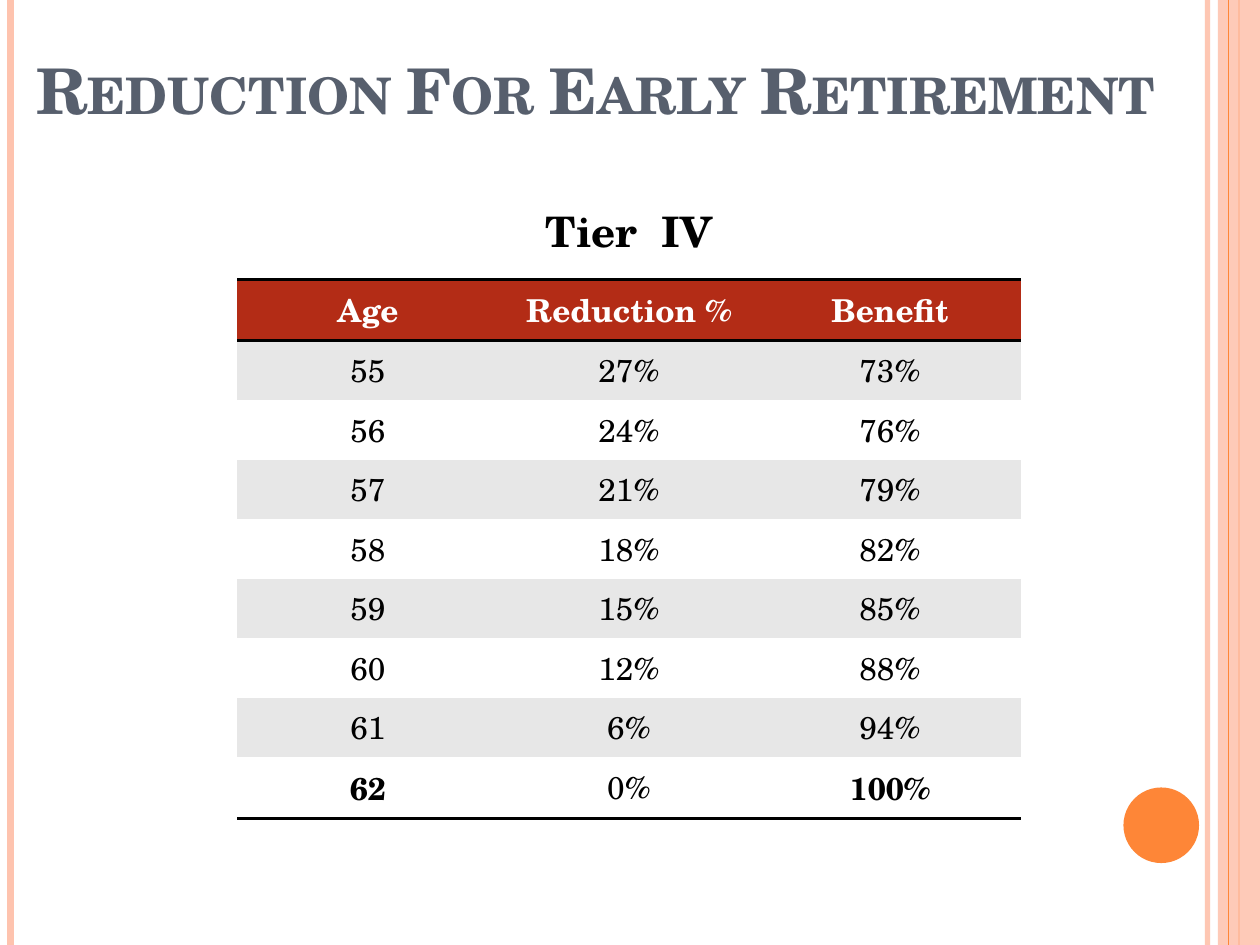
from lxml import etree
from pptx import Presentation
from pptx.dml.color import RGBColor
from pptx.enum.shapes import MSO_CONNECTOR, MSO_SHAPE
from pptx.enum.text import MSO_ANCHOR, MSO_AUTO_SIZE, PP_ALIGN
from pptx.oxml.ns import qn
from pptx.util import Pt

STRAIGHT = MSO_CONNECTOR.STRAIGHT
RECTANGLE, OVAL = MSO_SHAPE.RECTANGLE, MSO_SHAPE.OVAL
BOTTOM = MSO_ANCHOR.BOTTOM
NO_FIT, GROW = MSO_AUTO_SIZE.NONE, MSO_AUTO_SIZE.SHAPE_TO_FIT_TEXT
LEFT, CENTER = PP_ALIGN.LEFT, PP_ALIGN.CENTER

PEACH = RGBColor(0xFE, 0xC3, 0xAE)
ORANGE = RGBColor(0xFE, 0x86, 0x37)
SLATE = RGBColor(0x57, 0x5F, 0x6D)
BRICK = RGBColor(0xB3, 0x2C, 0x16)
GRAY = RGBColor(0xE7, 0xE7, 0xE7)
WHITE = RGBColor(0xFF, 0xFF, 0xFF)
BLACK = RGBColor(0, 0, 0)

FONT = "TeX Gyre Schola"
PAGE_WIDTH, PAGE_HEIGHT = 720, 540
HEADINGS = ("Age", "Reduction %", "Benefit")
REDUCTIONS = {55: 27, 56: 24, 57: 21, 58: 18, 59: 15, 60: 12, 61: 6, 62: 0}
FULL_AGE = 62


def write_text(frame, text, size=18, color=BLACK, bold=False, align=CENTER, small_caps=False):
    """Put one formatted line of text into a text frame."""
    para = frame.paragraphs[0]
    para.alignment = align
    span = para.add_run()
    span.text = text
    span.font.name = FONT
    span.font.size = Pt(size)
    span.font.bold = bold
    span.font.color.rgb = color
    if small_caps:
        span.font._element.set("cap", "small")


def set_opacity(parent, percent):
    """Make the solid colour below an XML element partly transparent."""
    color = next(parent.iter(qn("a:srgbClr")))
    etree.SubElement(color, qn("a:alpha")).set("val", str(percent * 1000))


def add_stripe(page, x, top, height, color, width, opacity=100):
    """Draw a vertical line."""
    stripe = page.shapes.add_connector(STRAIGHT, Pt(x), Pt(top), Pt(x), Pt(top + height))
    stripe.line.color.rgb = color
    stripe.line.width = Pt(width)
    properties = stripe.element.spPr
    if opacity < 100:
        set_opacity(properties, opacity)
    etree.SubElement(properties, qn("a:effectLst"))


def add_solid(page, kind, left, top, width, height, color):
    """Draw a filled shape without outline or shadow."""
    solid = page.shapes.add_shape(kind, Pt(left), Pt(top), Pt(width), Pt(height))
    solid.shadow.inherit = False
    solid.fill.solid()
    solid.fill.fore_color.rgb = color
    solid.line.fill.background()
    return solid


def add_decoration(page, left, top, width, height):
    """Draw the stripes at both sides and the disc at the lower right."""
    right = left + width
    add_stripe(page, right - 30, top, height, PEACH, 3, opacity=93)
    add_stripe(page, left + 6, top, height, PEACH, 4.5)
    add_stripe(page, right - 12, top, height, ORANGE, 1.5)
    band = add_solid(page, RECTANGLE, right - 24, top, 24, height, PEACH)
    set_opacity(band.element.spPr, 87)
    add_stripe(page, right - 18, top, height, ORANGE, 0.75)
    add_solid(page, OVAL, right - 78, top + height - 90, 43.2, 43.2, ORANGE)


def add_title(page, left, top, width, height):
    """Fill the title placeholder and bring it in front of the decoration."""
    title = page.shapes.title
    title.left, title.top, title.width, title.height = Pt(left), Pt(top), Pt(width), Pt(height)
    frame = title.text_frame
    frame.word_wrap = True
    frame.auto_size = NO_FIT
    frame.vertical_anchor = BOTTOM
    write_text(frame, "Reduction For Early Retirement", size=36, color=SLATE,
               bold=True, align=LEFT, small_caps=True)
    title.element.getparent().append(title.element)


def set_borders(cell, ruled_top, ruled_bottom):
    """Rule the chosen horizontal edges in black and clear the other edges."""
    properties = cell._tc.get_or_add_tcPr()
    edges = {"L": False, "R": False, "T": ruled_top, "B": ruled_bottom}
    for edge, ruled in edges.items():
        line = etree.SubElement(properties, qn(f"a:ln{edge}"))
        if ruled:
            line.set("w", str(Pt(2)))
            fill = etree.SubElement(line, qn("a:solidFill"))
            etree.SubElement(fill, qn("a:srgbClr")).set("val", str(BLACK))
        else:
            etree.SubElement(line, qn("a:noFill"))


def add_reduction_table(page, left, top, width, height):
    """Add the table of reductions and benefits by age."""
    rows = [HEADINGS]
    rows += [(str(age), f"{cut}%", f"{100 - cut}%") for age, cut in REDUCTIONS.items()]
    table = page.shapes.add_table(len(rows), len(HEADINGS), Pt(left), Pt(top),
                                  Pt(width), Pt(height)).table
    ruled_edges = (0, 1, len(rows))
    for row, values in enumerate(rows):
        table.rows[row].height = Pt(height / len(rows))
        is_header = row == 0
        is_full = values[0] == str(FULL_AGE)
        for column, value in enumerate(values):
            cell = table.cell(row, column)
            set_borders(cell, row in ruled_edges, row + 1 in ruled_edges)
            cell.fill.solid()
            cell.fill.fore_color.rgb = BRICK if is_header else GRAY if row % 2 else WHITE
            write_text(cell.text_frame, value, color=WHITE if is_header else BLACK,
                       bold=is_header or (is_full and column != 1))


def add_caption(page, left, top, width, height):
    """Add the tier name above the table."""
    box = page.shapes.add_textbox(Pt(left), Pt(top), Pt(width), Pt(height))
    box.text_frame.word_wrap = True
    box.text_frame.auto_size = GROW
    write_text(box.text_frame, "Tier  IV", size=24, bold=True)


def main():
    """Build the slide and save the deck."""
    deck = Presentation()
    deck.slide_width, deck.slide_height = Pt(PAGE_WIDTH), Pt(PAGE_HEIGHT)
    page = deck.slides.add_slide(deck.slide_layouts[5])
    add_decoration(page, 0, 0, PAGE_WIDTH, PAGE_HEIGHT)
    add_title(page, 13.5, 8.4, 690, 67.8)
    add_reduction_table(page, 135.6, 159.6, 447.6, 306)
    add_caption(page, 135.6, 114, 447.6, 36)
    deck.save("out.pptx")


if __name__ == "__main__":
    main()
